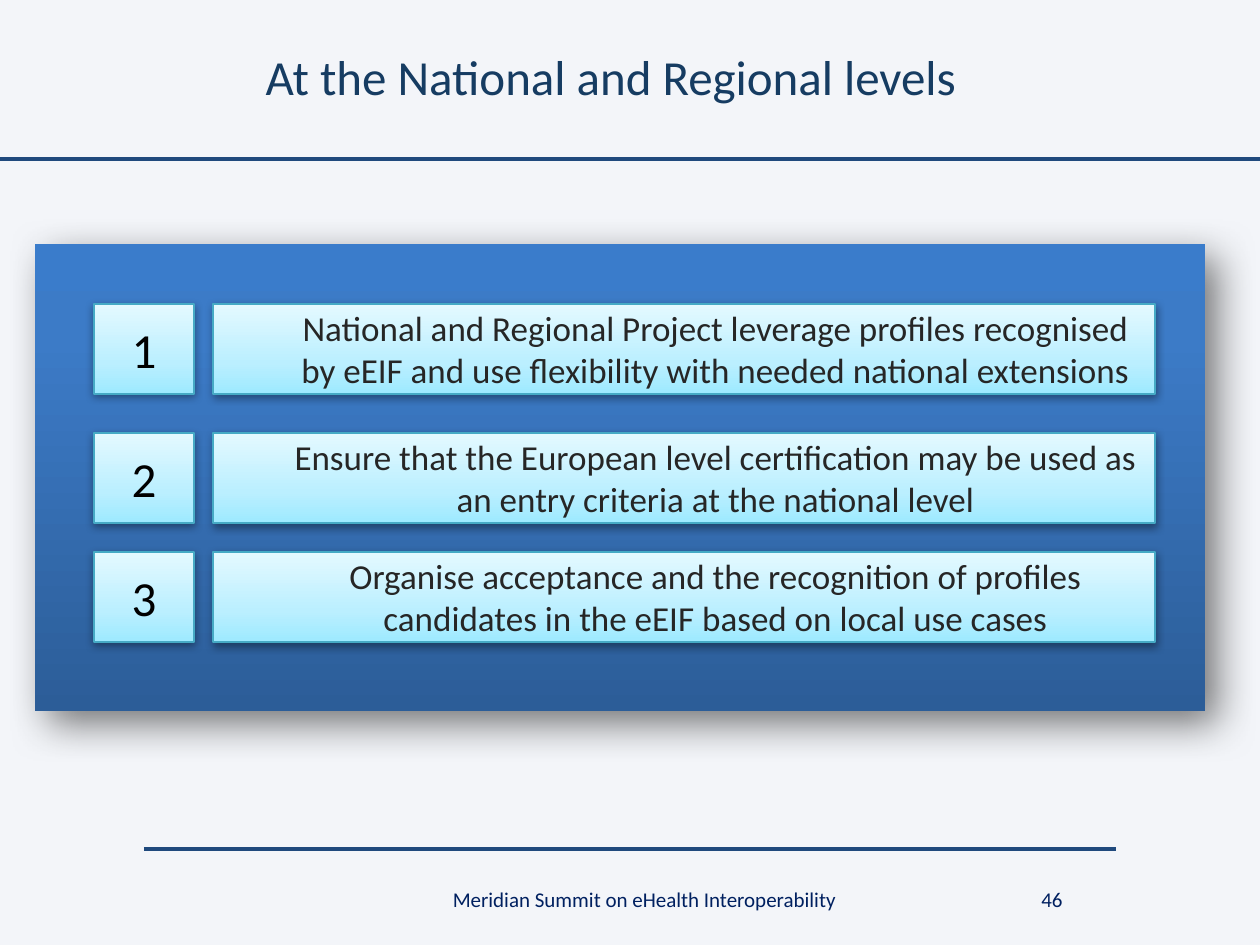
from dataclasses import dataclass

from lxml.etree import SubElement
from pptx import Presentation
from pptx.dml.color import RGBColor
from pptx.enum.shapes import MSO_CONNECTOR, MSO_SHAPE
from pptx.enum.text import MSO_ANCHOR, PP_ALIGN
from pptx.oxml.ns import qn
from pptx.util import Pt

SCALE = 914400 / 126  # EMU per px


@dataclass(frozen=True)
class Theme:
    font: str = "Calibri"
    background: str = "F3F5F9"
    rule: str = "1F497D"
    title: str = "163C62"
    footer: str = "002060"
    number: str = "000000"
    body: str = "262626"
    card_line: str = "46AAC5"
    panel_stops: tuple = ((0, "3A7CCB"), (20, "3C7BC7"), (100, "2C5D98"))
    card_stops: tuple = ((0, "9EEAFF"), (35, "BBEFFF"), (100, "E4F9FF"))
    # Shadows: colour, opacity %, blur pt, distance pt, direction in degrees
    panel_shadow: tuple = ("333333", 65, 23, 11, 45)
    card_shadow: tuple = ("000000", 38, 5, 1.6, 90)
    large: int = 28
    medium: int = 20
    small: int = 12


THEME = Theme()

# Top of each row and its statement
ROWS = (
    (304, "National and Regional Project leverage profiles recognised by eEIF "
          "and use flexibility with needed national extensions"),
    (433, "Ensure that the European level certification may be used as "
          "an entry criteria at the national level"),
    (552, "Organise acceptance and the recognition of profiles "
          "candidates in the eEIF based on local use cases"),
)


def px(length):
    return round(length * SCALE)


def add_color(parent, color, opacity=100):
    node = SubElement(parent, qn("a:srgbClr"), val=color)
    if opacity < 100:
        SubElement(node, qn("a:alpha"), val=str(opacity * 1000))


def write_text(shape, text, size, color, align=PP_ALIGN.CENTER,
               anchor=MSO_ANCHOR.MIDDLE, indent=0):
    frame = shape.text_frame
    frame.word_wrap = True
    frame.vertical_anchor = anchor
    para = frame.paragraphs[0]
    para.alignment = align
    if indent:
        para.level = 1
        properties = para._p.get_or_add_pPr()
        properties.set("marL", str(px(indent)))
        properties.set("indent", "0")
    span = para.add_run()
    span.text = text
    span.font.name = THEME.font
    span.font.size = Pt(size)
    span.font.color.rgb = RGBColor.from_string(color)


def fill_gradient(shape, stops, angle):
    shape.fill.gradient()
    gradient = shape._element.spPr.find(qn("a:gradFill"))
    for child in list(gradient):
        gradient.remove(child)
    stop_list = SubElement(gradient, qn("a:gsLst"))
    for position, color in stops:
        stop = SubElement(stop_list, qn("a:gs"), pos=str(position * 1000))
        add_color(stop, color)
    SubElement(gradient, qn("a:lin"), ang=str(angle * 60000), scaled="0")


def cast_shadow(shape, color, opacity, blur, distance, direction):
    shape.shadow.inherit = False
    effects = shape._element.spPr.find(qn("a:effectLst"))
    shadow = SubElement(effects, qn("a:outerShdw"), blurRad=str(Pt(blur)),
                        dist=str(Pt(distance)), dir=str(direction * 60000),
                        algn="ctr", rotWithShape="0")
    add_color(shadow, color, opacity)


def add_box(page, left, top, width, height, stops, angle, shadow, line=None):
    box = page.shapes.add_shape(MSO_SHAPE.RECTANGLE, px(left), px(top),
                                px(width), px(height))
    fill_gradient(box, stops, angle)
    if line:
        box.line.color.rgb = RGBColor.from_string(line)
        box.line.width = Pt(0.75)
    else:
        box.line.fill.background()
    cast_shadow(box, *shadow)
    return box


def add_card(page, left, top, width):
    return add_box(page, left, top, width, 90, THEME.card_stops, 270,
                   THEME.card_shadow, THEME.card_line)


def add_rule(page, start, end, top):
    rule = page.shapes.add_connector(MSO_CONNECTOR.STRAIGHT, px(start), px(top),
                                     px(end), px(top))
    rule.line.color.rgb = RGBColor.from_string(THEME.rule)
    rule.line.width = Pt(2.25)
    SubElement(rule._element.spPr, qn("a:effectLst"))


def add_footer(page, text, left, width):
    box = page.shapes.add_textbox(px(left), px(880), px(width), px(50))
    write_text(box, text, THEME.small, THEME.footer, anchor=MSO_ANCHOR.TOP)


def set_title(page, text):
    title = page.shapes.title
    title.left, title.top = px(253), px(6)
    title.width, title.height = px(764), px(139)
    write_text(title, text, THEME.large, THEME.title, align=PP_ALIGN.LEFT)


def main():
    deck = Presentation()
    deck.slide_width, deck.slide_height = px(1260), px(945)
    page = deck.slides.add_slide(deck.slide_layouts[5])
    page.background.fill.solid()
    page.background.fill.fore_color.rgb = RGBColor.from_string(THEME.background)

    # Header and footer rules, title
    add_rule(page, 0, 1260, 159)
    add_rule(page, 144, 1116, 849)
    set_title(page, "At the National and Regional levels")

    # Panel with numbered statements
    add_box(page, 35, 244, 1170, 467, THEME.panel_stops, 90, THEME.panel_shadow)
    for number, (top, statement) in enumerate(ROWS, start=1):
        write_text(add_card(page, 94, top, 100), str(number),
                   THEME.large, THEME.number)
        write_text(add_card(page, 213, top, 942), statement,
                   THEME.medium, THEME.body, indent=63)

    # Footer
    add_footer(page, "Meridian Summit on eHealth Interoperability", 332, 625)
    add_footer(page, "46", 988, 128)

    deck.save("out.pptx")


if __name__ == "__main__":
    main()
